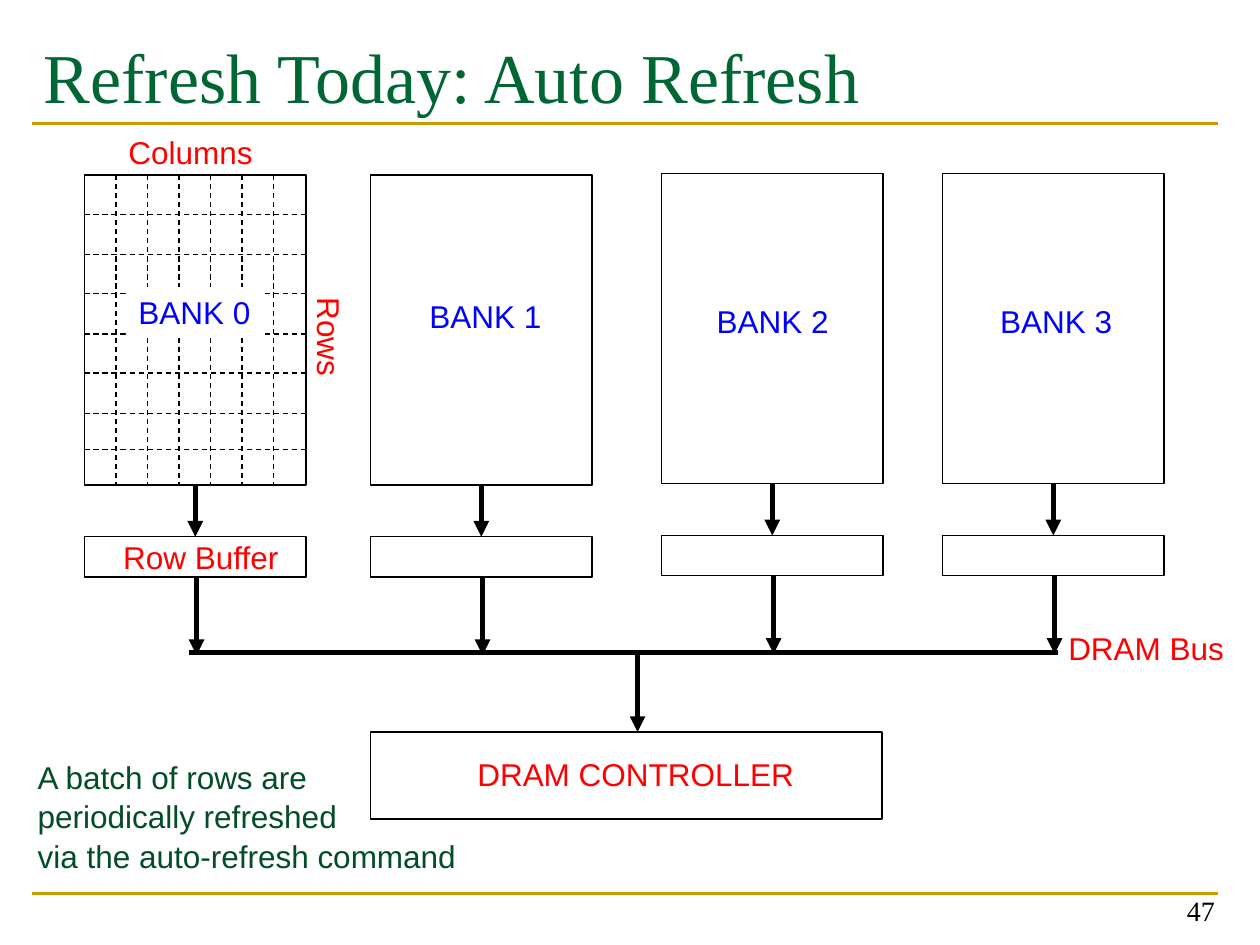
from dataclasses import dataclass

from lxml import etree
from pptx import Presentation
from pptx.dml.color import RGBColor
from pptx.enum.dml import MSO_LINE
from pptx.enum.shapes import MSO_CONNECTOR, MSO_SHAPE
from pptx.enum.text import MSO_ANCHOR, PP_ALIGN
from pptx.oxml.ns import qn
from pptx.slide import Slide
from pptx.util import Inches, Pt

STRAIGHT = MSO_CONNECTOR.STRAIGHT
RECTANGLE = MSO_SHAPE.RECTANGLE
DASH = MSO_LINE.DASH
TOP, BOTTOM = MSO_ANCHOR.TOP, MSO_ANCHOR.BOTTOM
LEFT, RIGHT = PP_ALIGN.LEFT, PP_ALIGN.RIGHT

BLACK = RGBColor(0x00, 0x00, 0x00)
WHITE = RGBColor(0xFF, 0xFF, 0xFF)
GOLD = RGBColor(0xCC, 0x99, 0x00)
GREEN = RGBColor(0x00, 0x66, 0x33)
DARK_GREEN = RGBColor(0x00, 0x4D, 0x26)
RED = RGBColor(0xFF, 0x00, 0x00)
BLUE = RGBColor(0x00, 0x00, 0xFF)

SERIF = "Times New Roman"
BANK_WIDTH, BANK_HEIGHT, BUFFER_HEIGHT = 1.76, 2.46, 0.32
BANKS = [
    (0.67, 1.39, 1.00, 2.28),
    (2.94, 1.39, 3.31, 2.31),
    (5.25, 1.38, 5.59, 2.35),
    (7.48, 1.38, 7.84, 2.35),
]
GRID_ROWS = [1.7, 2.02, 2.33, 2.65, 2.96, 3.28, 3.57]
GRID_COLUMNS = [0.92 + 0.25 * index for index in range(6)]


@dataclass
class Diagram:
    slide: Slide
    font: str = "Arial"
    size: float = 18
    thin: float = 0.75
    thick: float = 3

    def fill_text(self, shape, text, color, wrap=False, anchor=TOP, align=LEFT,
                  spacing=1.0, **font):
        frame = shape.text_frame
        frame.text = text
        frame.word_wrap = wrap
        frame.vertical_anchor = anchor
        values = {"name": self.font, "size": Pt(self.size), **font}
        for paragraph in frame.paragraphs:
            paragraph.alignment = align
            paragraph.line_spacing = spacing
            for name, value in values.items():
                setattr(paragraph.font, name, value)
            paragraph.font.color.rgb = color

    def text(self, box, text, color, rotation=0, **format_values):
        shape = self.slide.shapes.add_textbox(*map(Inches, box))
        shape.rotation = rotation
        self.fill_text(shape, text, color, **format_values)
        return shape

    def rectangle(self, box):
        shape = self.slide.shapes.add_shape(RECTANGLE, *map(Inches, box))
        shape.shadow.inherit = False
        shape.fill.background()
        shape.line.color.rgb = BLACK
        shape.line.width = Pt(self.thin)
        return shape

    def plate(self, box, text, color):
        shape = self.rectangle(box)
        shape.fill.solid()
        shape.fill.fore_color.rgb = WHITE
        shape.line.fill.background()
        self.fill_text(shape, text, color)

    def line(self, start, end, color=BLACK, width=None, dash=None):
        connector = self.slide.shapes.add_connector(
            STRAIGHT, *map(Inches, (*start, *end)))
        connector.line.color.rgb = color
        connector.line.width = Pt(width or self.thin)
        connector.line.dash_style = dash
        etree.SubElement(connector._element.spPr, qn("a:effectLst"))
        return connector

    def arrow(self, x, top, bottom):
        connector = self.line((x, top), (x, bottom), width=self.thick)
        outline = connector._element.spPr.find(qn("a:ln"))
        etree.SubElement(outline, qn("a:tailEnd"), type="triangle")


def build_frame(diagram):
    for y in (7.09, 0.98):
        diagram.line((0.25, y), (9.67, y), GOLD, 1.5)
    title = diagram.text((0.25, 0.17, 9.42, 1.17), "Refresh Today: Auto Refresh",
                         GREEN, wrap=True, name=SERIF, size=Pt(40))
    title.text_frame.margin_top = Inches(0.1)
    diagram.text((7.41, 6.91, 2.33, 0.5), "47", BLACK, wrap=True,
                 anchor=BOTTOM, align=RIGHT, name=SERIF, size=Pt(16))


def build_grid(diagram, left, top):
    right, bottom = left + BANK_WIDTH, top + BANK_HEIGHT
    for y in GRID_ROWS:
        diagram.line((left, y), (right, y), dash=DASH)
    for x in GRID_COLUMNS:
        diagram.line((x, top), (x, bottom), dash=DASH)


def build_banks(diagram):
    for number, (left, top, label_left, label_top) in enumerate(BANKS):
        buffer_top = top + 2.87
        buffer_bottom = buffer_top + BUFFER_HEIGHT
        diagram.rectangle((left, top, BANK_WIDTH, BANK_HEIGHT))
        diagram.rectangle((left, buffer_top, BANK_WIDTH, BUFFER_HEIGHT))
        if number == 0:
            build_grid(diagram, left, top)
        diagram.arrow(left + 0.88, top + BANK_HEIGHT, buffer_top)
        diagram.arrow(left + 0.89, buffer_bottom, buffer_bottom + 0.62)
        diagram.plate((label_left, label_top, 1.1, 0.4), f"BANK {number}", BLUE)


def build_controller(diagram):
    diagram.line((1.5, 5.18), (8.4, 5.18), width=diagram.thick)
    diagram.arrow(5.06, 5.18, 5.81)
    diagram.rectangle((2.94, 5.81, 4.06, 0.69))


def build_labels(diagram):
    diagram.text((0.92, 1.01, 1.19, 0.4), "Columns", RED)
    diagram.text((2.2, 2.48, 0.83, 0.4), "Rows", RED, rotation=90)
    diagram.text((0.88, 4.22, 1.44, 0.4), "Row Buffer", RED)
    diagram.text((3.69, 5.94, 2.74, 0.4), "DRAM CONTROLLER", RED)
    diagram.text((8.38, 4.94, 1.45, 0.4), "DRAM Bus", RED)
    note = "A batch of rows are\nperiodically refreshed\nvia the auto-refresh command"
    diagram.text((0.2, 5.95, 3.7, 1.01), note, DARK_GREEN, wrap=True, spacing=1.05)


def main():
    presentation = Presentation()
    presentation.slide_width = Inches(10)
    presentation.slide_height = Inches(7.5)
    slide = presentation.slides.add_slide(presentation.slide_layouts[6])
    diagram = Diagram(slide)
    build_frame(diagram)
    build_banks(diagram)
    build_controller(diagram)
    build_labels(diagram)
    presentation.save("out.pptx")


if __name__ == "__main__":
    main()
